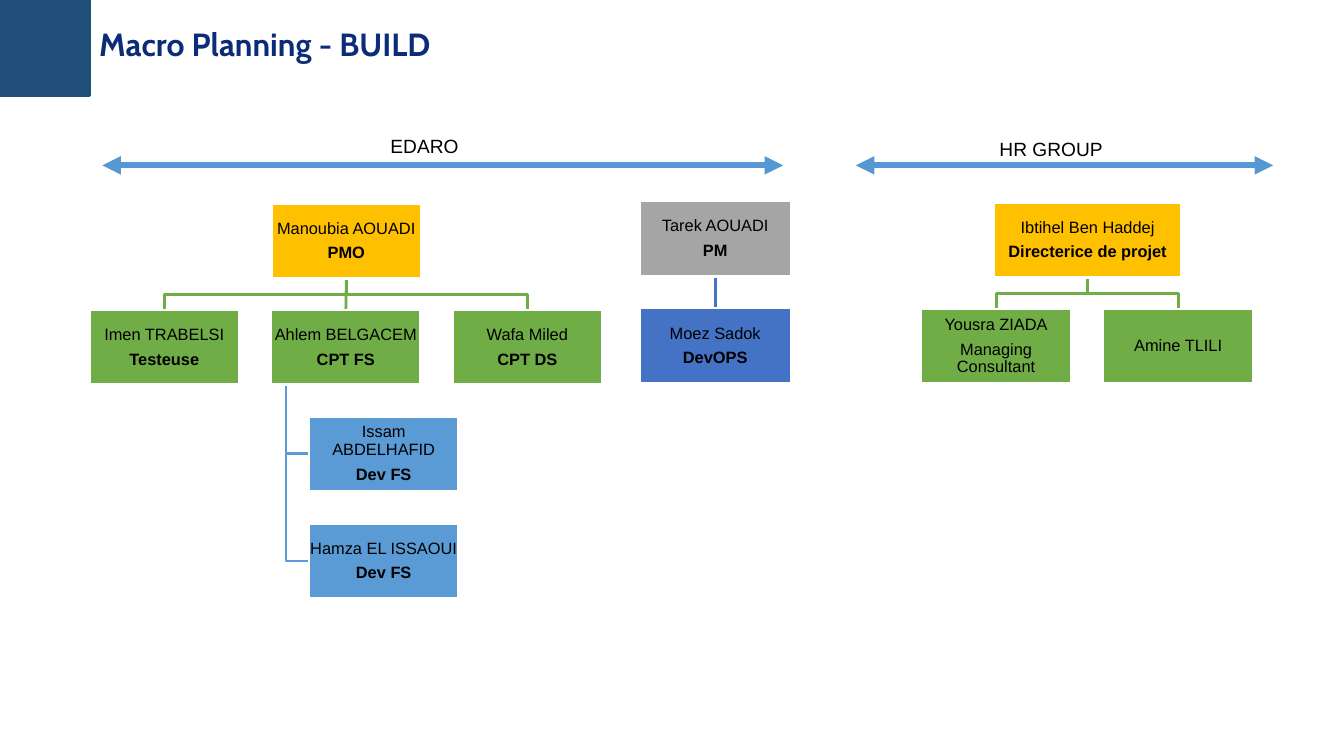
from dataclasses import dataclass

from lxml.etree import SubElement
from pptx import Presentation
from pptx.dml.color import RGBColor
from pptx.enum.shapes import MSO_CONNECTOR, MSO_SHAPE
from pptx.enum.text import MSO_ANCHOR, PP_ALIGN
from pptx.oxml.ns import qn
from pptx.shapes.connector import Connector
from pptx.slide import Slide
from pptx.util import Inches, Pt

NAVY = RGBColor(0x1F, 0x4E, 0x79)
TITLE_BLUE = RGBColor(0x0B, 0x2D, 0x78)
ARROW_BLUE = RGBColor(0x56, 0x98, 0xD3)
LIGHT_BLUE = RGBColor(0x5B, 0x9B, 0xD5)
BLUE = RGBColor(0x44, 0x72, 0xC4)
GREEN = RGBColor(0x70, 0xAD, 0x47)
GOLD = RGBColor(0xFF, 0xC0, 0x00)
GRAY = RGBColor(0xA5, 0xA5, 0xA5)
WHITE = RGBColor(0xFF, 0xFF, 0xFF)
BLACK = RGBColor(0x00, 0x00, 0x00)

Point = tuple[float, float]


@dataclass(frozen=True)
class Member:
    name: str
    role: str
    left: float
    top: float
    fill: RGBColor
    width: float = 1.52
    height: float = 0.76
    bold_role: bool = True

    @property
    def center(self) -> float:
        return self.left + self.width / 2

    @property
    def middle(self) -> float:
        return self.top + self.height / 2

    @property
    def bottom(self) -> float:
        return self.top + self.height


@dataclass(frozen=True)
class Team:
    lead: Member
    reports: list[Member]
    line_color: RGBColor
    hanging: bool = False


@dataclass(frozen=True)
class Company:
    name: str
    label_left: float
    label_top: float
    label_width: float
    arrow_left: float
    arrow_right: float


PMO = Member("Manoubia AOUADI", "PMO", 2.76, 2.07, GOLD)
TESTER, FS_LEAD, DS_LEAD = [
    Member(name, role, 0.91 + 1.845 * column, 3.15, GREEN)
    for column, (name, role) in enumerate([
        ("Imen TRABELSI", "Testeuse"),
        ("Ahlem BELGACEM", "CPT FS"),
        ("Wafa Miled", "CPT DS"),
    ])
]
FS_DEVELOPERS = [
    Member(name, "Dev FS", 3.14, 4.23 + 1.09 * row, LIGHT_BLUE)
    for row, name in enumerate(["Issam ABDELHAFID", "Hamza EL ISSAOUI"])
]
PM = Member("Tarek AOUADI", "PM", 6.5, 2.04, GRAY, 1.54, 0.77)
DEVOPS = Member("Moez Sadok", "DevOPS", 6.5, 3.13, BLUE, 1.54, 0.77)
DIRECTOR = Member("Ibtihel Ben Haddej", "Directerice de projet", 10.1, 2.06, GOLD, 1.91)
CONSULTANTS = [
    Member("Yousra ZIADA", "Managing Consultant", 9.36, 3.14, GREEN, 1.53, bold_role=False),
    Member("Amine TLILI", "", 11.21, 3.14, GREEN, 1.53),
]
TEAMS = [
    Team(PM, [DEVOPS], BLUE),
    Team(PMO, [TESTER, FS_LEAD, DS_LEAD], GREEN),
    Team(FS_LEAD, FS_DEVELOPERS, LIGHT_BLUE, hanging=True),
    Team(DIRECTOR, CONSULTANTS, GREEN),
]
MEMBERS = [PM, DEVOPS, PMO, TESTER, FS_LEAD, DS_LEAD, *FS_DEVELOPERS, DIRECTOR, *CONSULTANTS]
COMPANIES = [
    Company("EDARO", 3.87, 1.32, 0.9, 1.04, 7.96),
    Company("HR GROUP", 10.06, 1.35, 1.26, 8.7, 12.94),
]


def add_straight_line(
    slide: Slide, start: Point, end: Point, color: RGBColor, width: float
) -> Connector:
    connector = slide.shapes.add_connector(
        MSO_CONNECTOR.STRAIGHT, *map(Inches, start), *map(Inches, end)
    )
    connector.line.color.rgb = color
    connector.line.width = Pt(width)
    SubElement(connector._element.spPr, qn("a:effectLst"))
    return connector


def add_bent_line(slide: Slide, points: list[Point], color: RGBColor) -> None:
    start, *others = [(Inches(x), Inches(y)) for x, y in points]
    builder = slide.shapes.build_freeform(*start)
    builder.add_line_segments(others, close=False)
    shape = builder.convert_to_shape()
    shape.shadow.inherit = False
    shape.fill.background()
    shape.line.color.rgb = color
    shape.line.width = Pt(2)


def add_team_lines(slide: Slide, team: Team) -> None:
    lead = team.lead
    for report in team.reports:
        if team.hanging:
            stem = lead.left + lead.width / 10
            points = [(stem, lead.bottom), (stem, report.middle), (report.left, report.middle)]
            add_bent_line(slide, points, team.line_color)
            continue
        start, end = (lead.center, lead.bottom), (report.center, report.top)
        if abs(lead.center - report.center) < 0.02:
            add_straight_line(slide, start, end, team.line_color, 2)
        else:
            bend = (lead.bottom + report.top) / 2
            points = [start, (lead.center, bend), (report.center, bend), end]
            add_bent_line(slide, points, team.line_color)


def add_member(slide: Slide, member: Member) -> None:
    shape = slide.shapes.add_shape(
        MSO_SHAPE.RECTANGLE,
        *map(Inches, (member.left, member.top, member.width, member.height)),
    )
    shape.shadow.inherit = False
    shape.fill.solid()
    shape.fill.fore_color.rgb = member.fill
    shape.line.color.rgb = WHITE
    shape.line.width = Pt(2)
    frame = shape.text_frame
    frame.word_wrap = True
    frame.vertical_anchor = MSO_ANCHOR.MIDDLE
    frame.margin_left = frame.margin_right = 0
    frame.margin_top = frame.margin_bottom = Inches(0.01)
    frame.text = "\n".join(filter(None, (member.name, member.role)))
    for index, paragraph in enumerate(frame.paragraphs):
        paragraph.alignment = PP_ALIGN.CENTER
        paragraph.line_spacing = 0.9
        paragraph.space_after = Pt(5)
        font = paragraph.runs[0].font
        font.name, font.size = "Arial", Pt(12)
        font.color.rgb = BLACK
        font.bold = index == 1 and member.bold_role


def add_company(slide: Slide, company: Company) -> None:
    arrow = add_straight_line(
        slide, (company.arrow_left, 1.68), (company.arrow_right, 1.68), ARROW_BLUE, 4.5
    )
    for end in ("a:headEnd", "a:tailEnd"):
        SubElement(arrow.line._get_or_add_ln(), qn(end), type="triangle")
    label = slide.shapes.add_textbox(
        *map(Inches, (company.label_left, company.label_top, company.label_width, 0.34))
    )
    label.text_frame.text = company.name
    font = label.text_frame.paragraphs[0].runs[0].font
    font.name, font.size = "Arial", Pt(14)
    font.color.rgb = BLACK


def add_header(slide: Slide) -> None:
    corner = slide.shapes.add_shape(MSO_SHAPE.RECTANGLE, 0, 0, Inches(0.91), Inches(0.97))
    corner.shadow.inherit = False
    corner.fill.solid()
    corner.fill.fore_color.rgb = corner.line.color.rgb = NAVY
    corner.line.width = Pt(2)
    title = slide.shapes.add_textbox(Inches(0.91), 0, Inches(11.94), Inches(0.93))
    frame = title.text_frame
    frame.word_wrap = True
    frame.vertical_anchor = MSO_ANCHOR.MIDDLE
    frame.text = "Macro Planning - BUILD"
    frame.paragraphs[0].line_spacing = 0.9
    font = frame.paragraphs[0].runs[0].font
    font.name, font.size, font.bold = "Cabin", Pt(23.4), True
    font.color.rgb = TITLE_BLUE


def main() -> None:
    presentation = Presentation()
    presentation.slide_width = Inches(13.66)
    presentation.slide_height = Inches(7.68)
    slide = presentation.slides.add_slide(presentation.slide_layouts[6])
    add_header(slide)
    for team in TEAMS:
        add_team_lines(slide, team)
    for member in MEMBERS:
        add_member(slide, member)
    for company in COMPANIES:
        add_company(slide, company)
    presentation.save("out.pptx")


if __name__ == "__main__":
    main()
